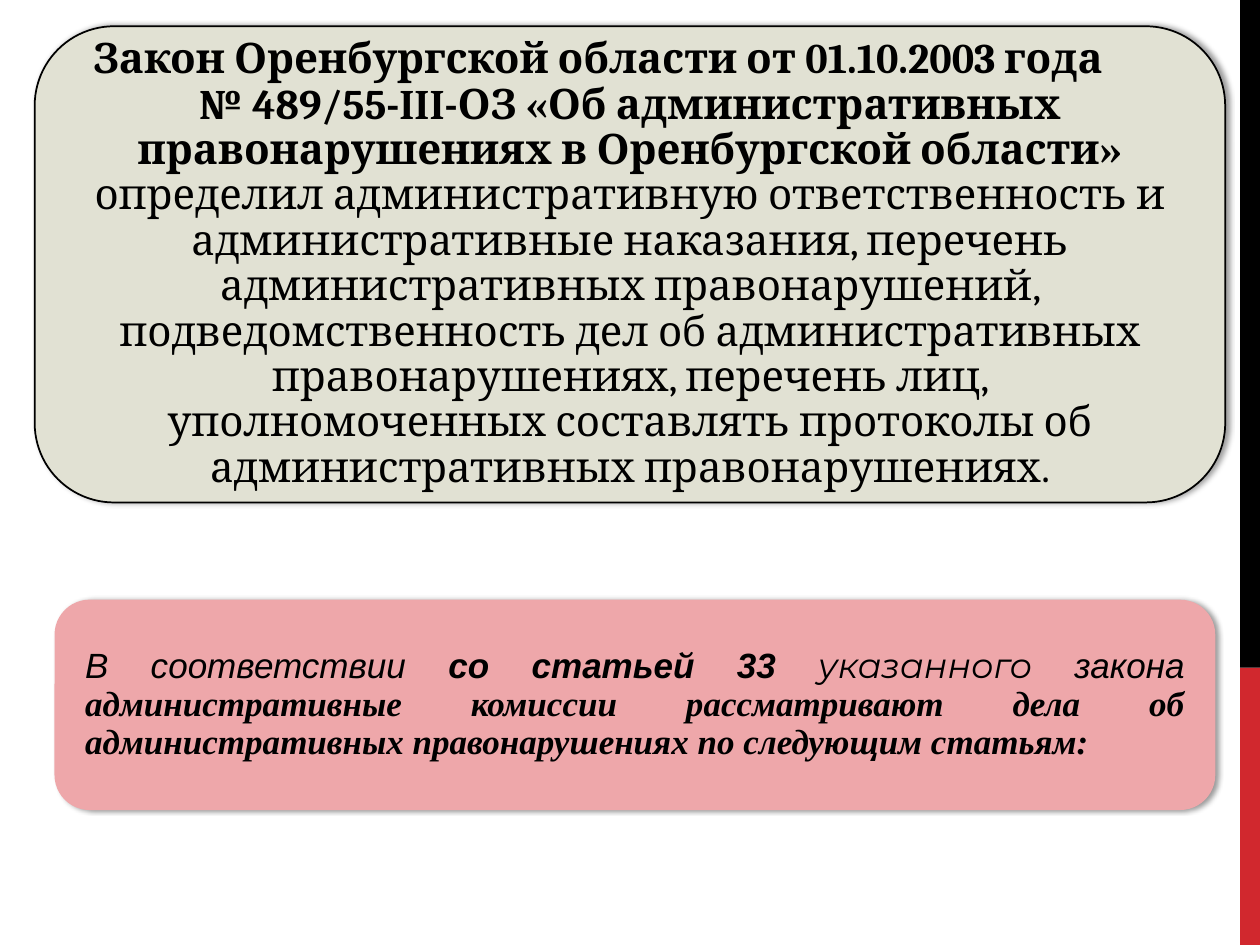
import pptx
import pptx.util
import pptx.dml.color
import pptx.enum.shapes
import pptx.enum.text
import lxml.etree
from pptx.oxml.ns import qn

Cm, Pt = pptx.util.Cm, pptx.util.Pt
RGBColor = pptx.dml.color.RGBColor
MSO_SHAPE = pptx.enum.shapes.MSO_SHAPE
ALIGN = pptx.enum.text.PP_ALIGN

BLACK = RGBColor(0x00, 0x00, 0x00)
RED = RGBColor(0xD1, 0x28, 0x2E)
ROSE = RGBColor(0xEE, 0xA7, 0xAA)
SAND = RGBColor(0xE1, 0xE1, 0xD3)

WIDTH, HEIGHT = 25.4, 19.05


def add_shape(slide, kind, box, fill):
    """Add a plain filled shape; box is left, top, width, height in cm."""
    shape = slide.shapes.add_shape(kind, *map(Cm, box))
    shape.shadow.inherit = False
    shape.fill.solid()
    shape.fill.fore_color.rgb = fill
    shape.line.fill.background()
    return shape


def add_shadow(shape):
    effects = shape._element.spPr.find(qn("a:effectLst"))
    outer = lxml.etree.SubElement(
        effects, qn("a:outerShdw"), blurRad=str(Pt(3.1)), dist=str(Pt(1.8)),
        dir="0", algn="ctr", rotWithShape="0")
    color = lxml.etree.SubElement(outer, qn("a:srgbClr"), val=str(BLACK))
    lxml.etree.SubElement(color, qn("a:alpha"), val="40000")


def add_panel(slide, box, fill, inset):
    """Add a rounded panel with a shadow and return it."""
    panel = add_shape(slide, MSO_SHAPE.ROUNDED_RECTANGLE, box, fill)
    add_shadow(panel)
    frame = panel.text_frame
    frame.word_wrap = True
    frame.vertical_anchor = pptx.enum.text.MSO_ANCHOR.MIDDLE
    frame.margin_left = frame.margin_right = Cm(inset)
    frame.margin_top = frame.margin_bottom = Cm(inset)
    return panel


def fill_para(para, align, size, runs, italic=False):
    """Set up a paragraph from runs of text, font name and boldness."""
    para.alignment = align
    para.line_spacing = 0.9
    para.space_after = Pt(0)
    for text, name, bold in runs:
        run = para.add_run()
        run.text = text
        font = run.font
        font.name, font.size = name, Pt(size)
        font.bold, font.italic = bold, italic
        font.color.rgb = BLACK


def add_stripe(slide, box):
    """Add the two-colour stripe down the side of the slide."""
    left, top, width, height = box
    split = 13.46
    add_shape(slide, MSO_SHAPE.RECTANGLE,
              (left, top + split, width, height - split), RED)
    add_shape(slide, MSO_SHAPE.RECTANGLE, (left, top, width, split), BLACK)


def add_law(slide, box):
    panel = add_panel(slide, box, SAND, 0.71)
    panel.line.color.rgb = BLACK
    panel.line.width = Pt(1)
    frame = panel.text_frame
    fill_para(frame.paragraphs[0], ALIGN.LEFT, 24, [
        ("Закон Оренбургской области от 01.10.2003 года", "Cambria", True)])
    fill_para(frame.add_paragraph(), ALIGN.CENTER, 24, [
        ("№ 489/55-III-ОЗ «Об административных правонарушениях "
         "в Оренбургской области»", "Cambria", True),
        (" определил административную ответственность и административные "
         "наказания, перечень административных правонарушений, "
         "подведомственность дел об административных правонарушениях, "
         "перечень лиц, уполномоченных составлять протоколы об "
         "административных правонарушениях.", "Cambria", False)])


def add_article(slide, box):
    panel = add_panel(slide, box, ROSE, 0.41)
    fill_para(panel.text_frame.paragraphs[0], ALIGN.JUSTIFY, 20, [
        ("В соответствии ", "Arial", False),
        ("со статьей 33 ", "Arial", True),
        ("указанного", "Montserrat", False),
        (" закона ", "Arial", False),
        ("административные комиссии рассматривают дела об административных "
         "правонарушениях по следующим статьям: ", "Times New Roman", True),
    ], italic=True)


def main():
    deck = pptx.Presentation()
    deck.slide_width, deck.slide_height = Cm(WIDTH), Cm(HEIGHT)
    slide = deck.slides.add_slide(deck.slide_layouts.get_by_name("Blank"))
    add_stripe(slide, (25, 0, WIDTH - 25, HEIGHT))
    add_article(slide, (1.1, 12.09, 23.4, 4.24))
    add_law(slide, (0.7, 0.53, 24, 9.6))
    deck.save("out.pptx")


if __name__ == "__main__":
    main()
